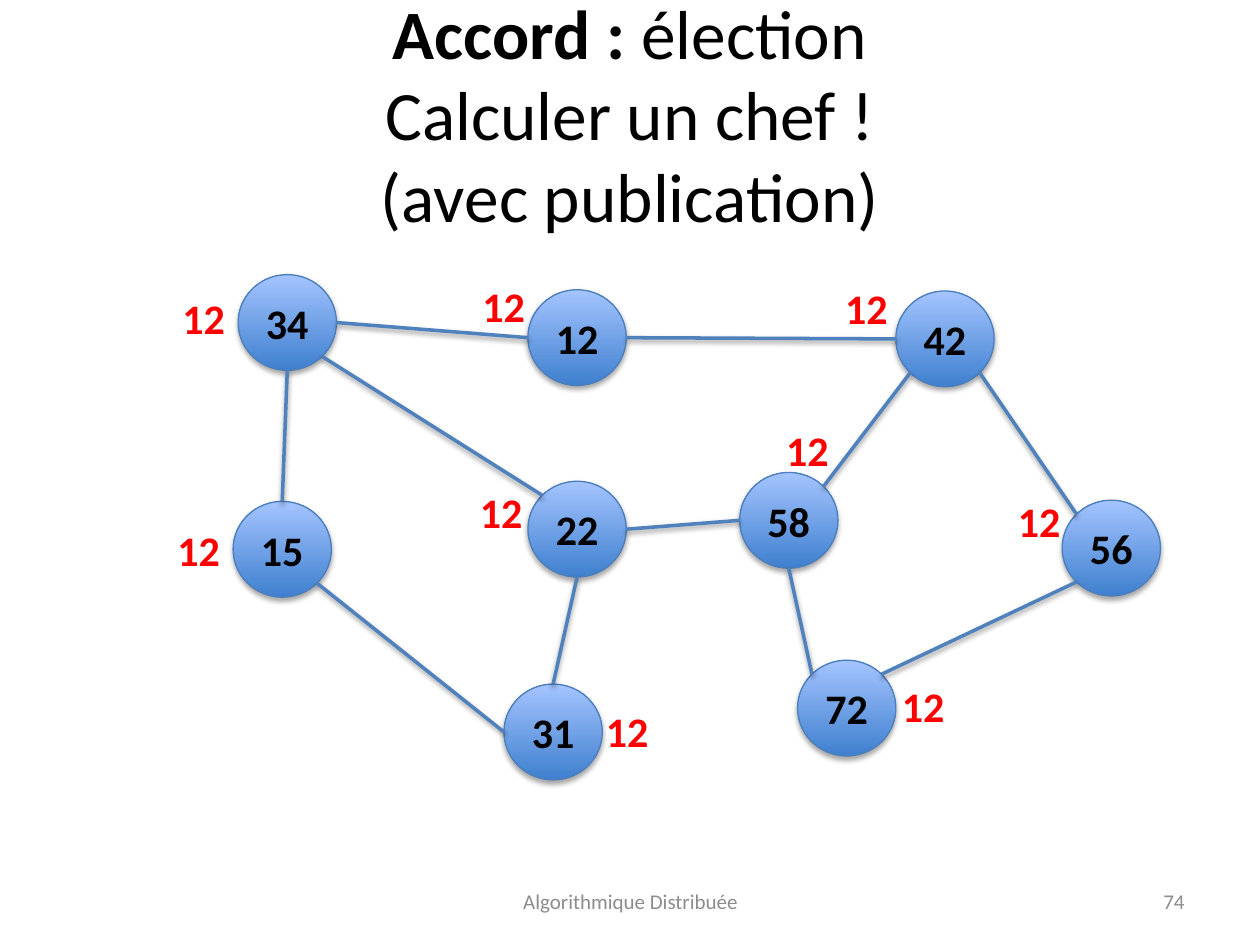
from math import cos, pi, sin

from lxml.etree import SubElement
from pptx import Presentation
from pptx.dml.color import RGBColor
from pptx.enum.shapes import MSO_CONNECTOR, MSO_SHAPE
from pptx.enum.text import MSO_ANCHOR, MSO_AUTO_SIZE, PP_ALIGN
from pptx.oxml.ns import qn
from pptx.util import Inches, Pt

TOP, UPLEFT, LEFT, LOWLEFT, BOTTOM, LOWRIGHT, RIGHT, UPRIGHT = range(8)

NODES = {
    "42": (71.1, 23.1), "22": (41.9, 38.2), "34": (18.9, 21.8),
    "58": (58.7, 37.5), "56": (84.3, 39.7), "72": (63.3, 52.4),
    "31": (40, 54.3), "15": (18.5, 39.8), "12": (41.9, 23),
}
EDGES = [
    ("34", LOWRIGHT, "22", UPLEFT), ("34", BOTTOM, "15", TOP),
    ("12", LEFT, "34", RIGHT), ("12", RIGHT, "42", LEFT),
    ("42", LOWRIGHT, "56", UPLEFT), ("42", LOWLEFT, "58", UPRIGHT),
    ("58", LEFT, "22", RIGHT), ("15", LOWRIGHT, "31", LEFT),
    ("22", BOTTOM, "31", TOP), ("58", BOTTOM, "72", UPLEFT),
    ("56", LOWLEFT, "72", UPRIGHT),
]
LABELS = [
    (13.5, 22.7), (13.1, 41.1), (37.3, 21.8), (66.1, 21.9), (79.8, 38.8),
    (61.4, 33.2), (37.1, 38.1), (70.6, 53.5), (47.1, 55.5),
]


def tint(code):
    return RGBColor.from_string(code)


class Graph:
    font = "Calibri"
    black, red, grey = "000000", "FF0000", "8C8C8C"
    edge, rim = "4F81BD", "4B7EBC"
    dark, light = "3F80CE", "A4C4FF"
    wide, high = 7.8, 7.6

    def __init__(self, deck):
        self.cell = deck.slide_width / 100
        self.slide = deck.slides.add_slide(deck.slide_layouts[5])
        self.nodes = {}

    def grid(self, *cells):
        return [round(n * self.cell) for n in cells]

    def style(self, para, size, color, bold=False, align=None):
        para.alignment = align
        font = para.font
        font.name, font.size, font.bold = self.font, Pt(size), bold
        font.color.rgb = tint(color)

    def shade(self, shape, alpha, dist):
        props = shape._element.spPr
        effects = SubElement(props, qn("a:effectLst"))
        shadow = SubElement(effects, qn("a:outerShdw"), blurRad=str(Pt(3.1)),
                            dist=str(Pt(dist)), dir="5400000", rotWithShape="0")
        color = SubElement(shadow, qn("a:srgbClr"), val=self.black)
        SubElement(color, qn("a:alpha"), val=str(alpha * 1000))

    def title(self, lead, rest):
        shape = self.slide.shapes.title
        shape.left, shape.top, shape.width, shape.height = self.grid(5, 3, 90, 12.5)
        frame = shape.text_frame
        frame.auto_size = MSO_AUTO_SIZE.NONE
        frame.vertical_anchor = MSO_ANCHOR.MIDDLE
        para = frame.paragraphs[0]
        self.style(para, 39.6, self.black, align=PP_ALIGN.CENTER)
        para.line_spacing = 0.98
        run = para.add_run()
        run.text, run.font.bold = lead, True
        for i, line in enumerate(rest):
            if i:
                para.add_line_break()
            para.add_run().text = line

    def node(self, name, x, y):
        shape = self.slide.shapes.add_shape(
            MSO_SHAPE.OVAL, *self.grid(x, y, self.wide, self.high))
        shape.fill.gradient()
        shape.fill.gradient_angle = 90
        for stop, code in zip(shape.fill.gradient_stops, (self.dark, self.light)):
            stop.color.rgb = tint(code)
        shape.line.color.rgb = tint(self.rim)
        shape.line.width = Pt(0.75)
        self.shade(shape, 35, 1.8)
        frame = shape.text_frame
        frame.word_wrap = False
        frame.vertical_anchor = MSO_ANCHOR.MIDDLE
        frame.text = name
        self.style(frame.paragraphs[0], 24, self.black, True, PP_ALIGN.CENTER)
        self.nodes[name] = shape

    def site(self, name, idx):
        shape, turn = self.nodes[name], idx * pi / 4
        return (round(shape.left + shape.width * (1 - sin(turn)) / 2),
                round(shape.top + shape.height * (1 - cos(turn)) / 2))

    def link(self, start, out, end, into):
        line = self.slide.shapes.add_connector(
            MSO_CONNECTOR.STRAIGHT, *self.site(start, out), *self.site(end, into))
        line.line.color.rgb = tint(self.edge)
        line.line.width = Pt(2)
        self.shade(line, 38, 1.6)
        joints = line._element.find(".//" + qn("p:cNvCxnSpPr"))
        for tag, name, idx in (("a:stCxn", start, out), ("a:endCxn", end, into)):
            SubElement(joints, qn(tag), id=str(self.nodes[name].shape_id), idx=str(idx))

    def label(self, text, x, y):
        box = self.slide.shapes.add_textbox(*self.grid(x, y, 5.4, 5))
        frame = box.text_frame
        frame.word_wrap = False
        frame.auto_size = MSO_AUTO_SIZE.SHAPE_TO_FIT_TEXT
        frame.text = text
        self.style(frame.paragraphs[0], 24, self.red, True, PP_ALIGN.LEFT)

    def footer(self, text, x, width, align):
        frame = self.slide.shapes.add_textbox(*self.grid(x, 69.5, width, 4)).text_frame
        frame.word_wrap = True
        frame.vertical_anchor = MSO_ANCHOR.MIDDLE
        frame.text = text
        self.style(frame.paragraphs[0], 12, self.grey, align=align)


def main():
    deck = Presentation()
    deck.slide_width, deck.slide_height = Inches(10), Inches(7.5)
    graph = Graph(deck)
    graph.title("Accord : ", ["élection", "Calculer un chef !", "(avec publication)"])
    graph.footer("Algorithmique Distribuée", 34.2, 31.7, PP_ALIGN.CENTER)
    for name, spot in NODES.items():
        graph.node(name, *spot)
    for edge in EDGES:
        graph.link(*edge)
    for spot in LABELS:
        graph.label("12", *spot)
    graph.footer("74", 71.7, 23.3, PP_ALIGN.RIGHT)
    deck.save("out.pptx")


if __name__ == "__main__":
    main()
